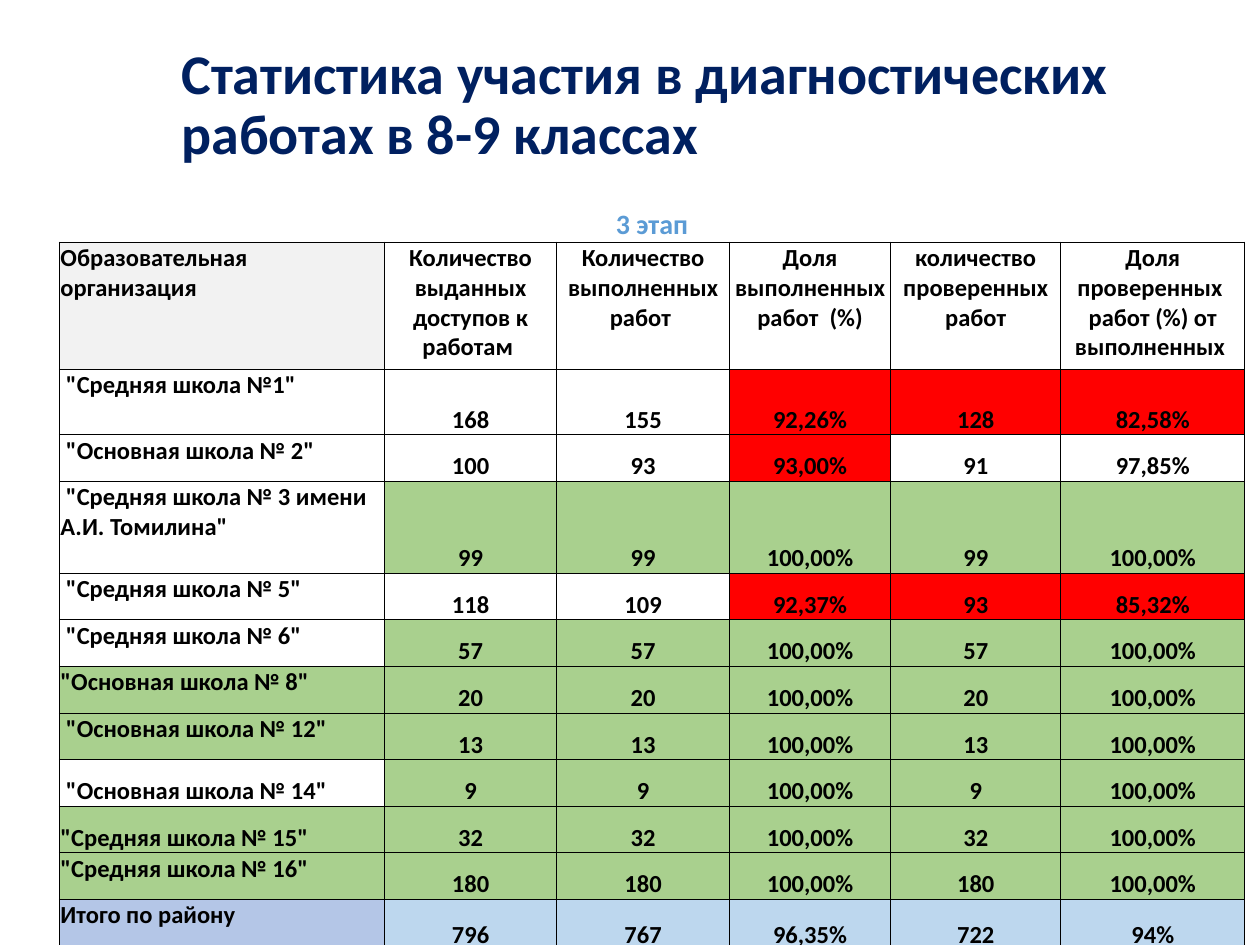
from lxml import etree
from pptx import Presentation
from pptx.dml.color import RGBColor
from pptx.enum.text import MSO_ANCHOR, PP_ALIGN
from pptx.oxml.ns import qn
from pptx.util import Inches, Pt

LEFT, CENTER = PP_ALIGN.LEFT, PP_ALIGN.CENTER
TOP, MIDDLE, BOTTOM = MSO_ANCHOR.TOP, MSO_ANCHOR.MIDDLE, MSO_ANCHOR.BOTTOM
TITLE_ONLY = 5
FONT = "Calibri"
COLORS = {
    "title": "002060", "stage": "5B9BD5", "text": "000000", "border": "000000",
    "header": "F2F2F2", "white": "FFFFFF", "low": "FF0000", "full": "A9D08E",
    "total_name": "B4C6E7", "total": "BDD7EE",
}
# One letter per cell in a row's fill pattern; "-" leaves the cell unfilled
FILLS = {"-": None, "h": "header", "w": "white", "r": "low", "g": "full",
         "n": "total_name", "t": "total"}

COLUMN_WIDTHS = [2.58, 1.37, 1.37, 1.28, 1.35, 1.46]
STAGE = "3 этап"
STAGE_HEIGHT = 0.53
HEADER = ["Образовательная организация", "Количество выданных доступов к работам ",
          "Количество выполненных работ ", "Доля выполненных работ  (%)",
          "количество проверенных работ", "Доля проверенных  работ (%) от выполненных "]
# Row height, fill pattern, anchor of the name, values
ROWS = [
    (1.01, "h-----", TOP, HEADER),
    (0.52, "-wwrrr", TOP, [' "Средняя школа №1"', "168", "155", "92,26%", "128", "82,58%"]),
    (0.37, "---r--", TOP, [' "Основная школа № 2"', "100", "93", "93,00%", "91", "97,85%"]),
    (0.73, "-ggggg", TOP, [' "Средняя школа № 3 имени А.И. Томилина"',
                           "99", "99", "100,00%", "99", "100,00%"]),
    (0.37, "---rrr", TOP, [' "Средняя школа № 5"', "118", "109", "92,37%", "93", "85,32%"]),
    (0.37, "-ggggg", TOP, [' "Средняя школа № 6"', "57", "57", "100,00%", "57", "100,00%"]),
    (0.37, "gggggg", TOP, ['"Основная школа № 8"', "20", "20", "100,00%", "20", "100,00%"]),
    (0.37, "gggggg", TOP, [' "Основная школа № 12"', "13", "13", "100,00%", "13", "100,00%"]),
    (0.37, "-ggggg", BOTTOM, [' "Основная школа № 14"', "9", "9", "100,00%", "9", "100,00%"]),
    (0.37, "gggggg", BOTTOM, ['"Средняя школа № 15"', "32", "32", "100,00%", "32", "100,00%"]),
    (0.37, "gggggg", TOP, ['"Средняя школа № 16"', "180", "180", "100,00%", "180", "100,00%"]),
    (0.40, "nttttt", TOP, ["Итого по району", "796", "767", "96,35%", "722", "94%"]),
]


def write(text_frame, text, size, color, alignment):
    text_frame.text = text
    paragraph = text_frame.paragraphs[0]
    paragraph.alignment = alignment
    font = paragraph.runs[0].font
    font.name, font.size, font.bold = FONT, Pt(size), True
    font.color.rgb = RGBColor.from_string(COLORS[color])
    return paragraph


def add_borders(cell, sides):
    properties = cell._tc.get_or_add_tcPr()
    for side in sides:
        line = etree.SubElement(properties, qn(f"a:ln{side}"), w=str(Pt(0.5)))
        fill = etree.SubElement(line, qn("a:solidFill"))
        etree.SubElement(fill, qn("a:srgbClr"), val=COLORS["border"])


def format_cell(cell, text, size, color, alignment, anchor, fill=None):
    write(cell.text_frame, text, size, color, alignment)
    cell.vertical_anchor = anchor
    cell.margin_left = cell.margin_right = cell.margin_top = Inches(0.01)
    cell.margin_bottom = 0
    if fill:
        cell.fill.solid()
        cell.fill.fore_color.rgb = RGBColor.from_string(COLORS[fill])
    else:
        cell.fill.background()


def add_title(slide, text):
    title = slide.shapes.title
    title.left, title.top = Inches(1.34), Inches(0.3)
    title.width, title.height = Inches(7.97), Inches(1.09)
    title.text_frame.vertical_anchor = MIDDLE
    write(title.text_frame, text, 32, "title", LEFT).line_spacing = 0.9


def add_statistics_table(slide):
    heights = [STAGE_HEIGHT] + [row[0] for row in ROWS]
    table = slide.shapes.add_table(
        len(heights), len(COLUMN_WIDTHS), Inches(0.47), Inches(1.39),
        Inches(sum(COLUMN_WIDTHS)), Inches(sum(heights))).table
    table.first_row = table.horz_banding = False
    for column, width in zip(table.columns, COLUMN_WIDTHS):
        column.width = Inches(width)
    for row, height in zip(table.rows, heights):
        row.height = Inches(height)

    # Stage caption across the whole table
    for cell in table.rows[0].cells:
        add_borders(cell, "B")
    stage = table.cell(0, 0)
    stage.merge(table.cell(0, len(COLUMN_WIDTHS) - 1))
    format_cell(stage, STAGE, 16, "stage", CENTER, BOTTOM)

    # Header, schools and district total
    for row_index, (_, pattern, name_anchor, values) in enumerate(ROWS, 1):
        value_anchor = TOP if values is HEADER else BOTTOM
        for column_index, (text, key) in enumerate(zip(values, pattern)):
            cell = table.cell(row_index, column_index)
            add_borders(cell, "LRTB")
            is_name = column_index == 0
            format_cell(cell, text, 14, "text", LEFT if is_name else CENTER,
                        name_anchor if is_name else value_anchor, FILLS[key])


def main():
    presentation = Presentation()
    presentation.slide_width, presentation.slide_height = Inches(10), Inches(7.5)
    slide = presentation.slides.add_slide(presentation.slide_layouts[TITLE_ONLY])
    add_title(slide, "Статистика участия в диагностических работах в 8-9 классах")
    add_statistics_table(slide)
    presentation.save("out.pptx")


if __name__ == "__main__":
    main()
